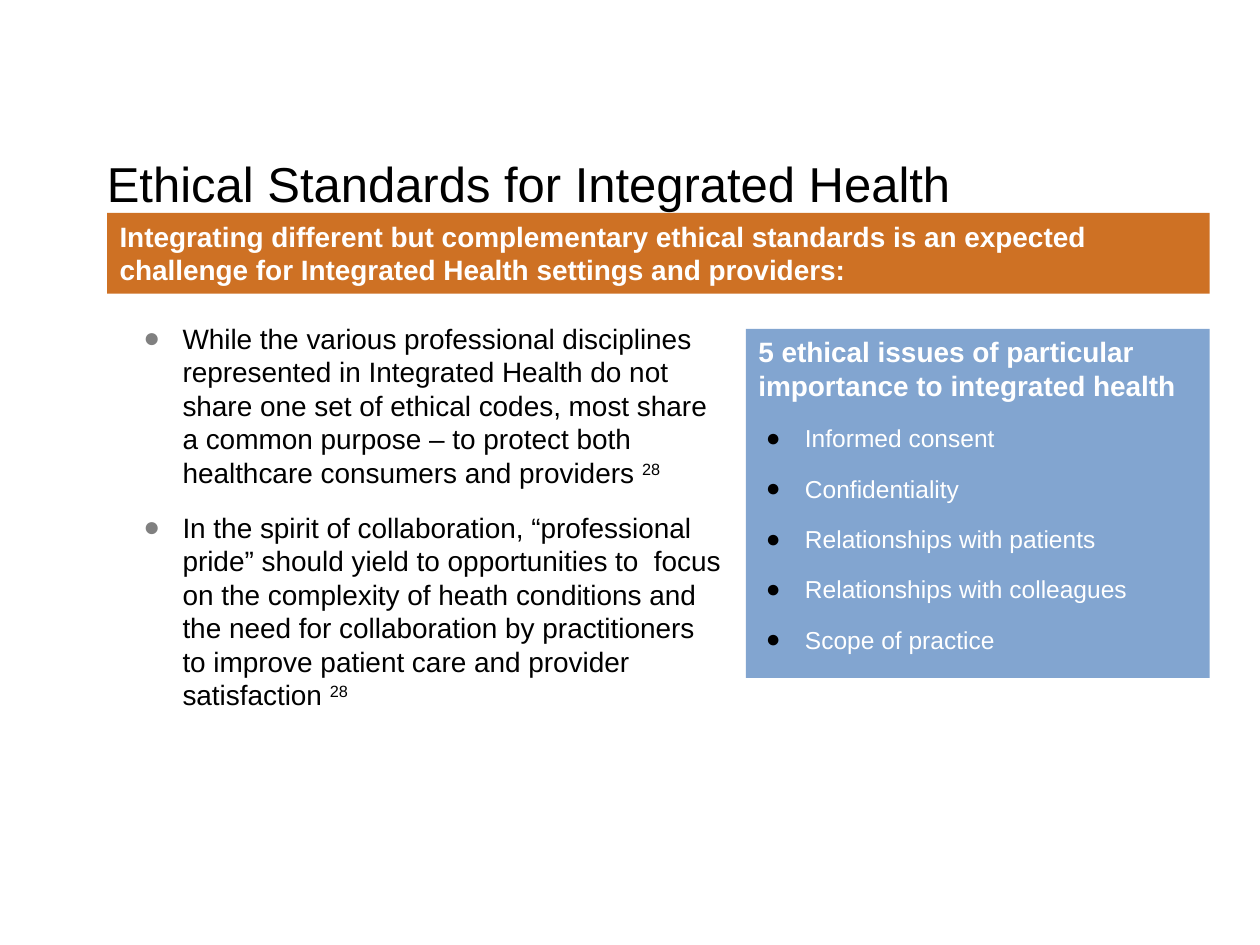
from lxml.etree import SubElement
from pptx import Presentation
from pptx.dml.color import RGBColor as RGB
from pptx.enum.shapes import MSO_SHAPE as SHAPE
from pptx.enum.text import MSO_ANCHOR as ANCHOR, PP_ALIGN as ALIGN
from pptx.oxml.ns import qn
from pptx.util import Inches, Pt

COLORS = {"black": "000000", "white": "FFFFFF", "gray": "808080",
          "blue": "82A5D0", "orange": "CE7124"}

prs = Presentation()
prs.slide_width, prs.slide_height = Inches(10), Inches(7.5)
slide = prs.slides.add_slide(prs.slide_layouts[6])


def add_box(left, top, width, height, fill=None):
    """Add a text box, or a plain rectangle when a fill is given."""
    place = [Inches(n) for n in (left, top, width, height)]
    if fill:
        box = slide.shapes.add_shape(SHAPE.RECTANGLE, *place)
        box.shadow.inherit = False
        box.fill.solid()
        box.fill.fore_color.rgb = RGB.from_string(COLORS[fill])
        box.line.fill.background()
    else:
        box = slide.shapes.add_textbox(*place)
    frame = box.text_frame
    frame.word_wrap = True
    frame.vertical_anchor = ANCHOR.TOP
    return frame


def add_para(frame, text, size, color, bold=False, bullet=None, indent=0, note=None):
    """Write the next paragraph, with an optional bullet and raised note number."""
    first = not frame.paragraphs[0].runs
    para = frame.paragraphs[0] if first else frame.add_paragraph()
    para.alignment = ALIGN.LEFT
    if not first:
        para.space_before = Pt(12)
    if bullet:
        props = para._p.get_or_add_pPr()
        props.set("marL", str(Inches(indent)))
        props.set("indent", str(-Inches(0.31)))
        tint = SubElement(props, qn("a:buClr"))
        SubElement(tint, qn("a:srgbClr"), val=COLORS[bullet])
        SubElement(props, qn("a:buFont"), typeface="Arial")
        SubElement(props, qn("a:buChar"), char="●")
    para.add_run().text = text
    if note:
        run = para.add_run()
        run.text = note
        run._r.get_or_add_rPr().set("baseline", "30000")
    font = para.font
    font.name, font.size, font.bold = "Arial", Pt(size), bold
    font.color.rgb = RGB.from_string(COLORS[color])


# Banner, placed first so that the title stays in front
banner = add_box(0.85, 1.69, 8.75, 0.64, fill="orange")
add_para(banner, "Integrating different but complementary ethical standards is an "
         "expected challenge for Integrated Health settings and providers:",
         16, "white", bold=True)

# Title
title = add_box(0.75, 1.17, 8.75, 0.92)
title.margin_top = Inches(0.05)
add_para(title, "Ethical Standards for Integrated Health", 28, "black")

# Main points
body = add_box(1.04, 2.5, 4.79, 3.08)
points = [
    "While the various professional disciplines represented in Integrated Health "
    "do not share one set of ethical codes, most share a common purpose – to "
    "protect both healthcare consumers and providers ",
    "In the spirit of collaboration, “professional pride” should yield to "
    "opportunities to  focus on the complexity of heath conditions and the need "
    "for collaboration by practitioners to improve patient care and provider "
    "satisfaction ",
]
for point in points:
    add_para(body, point, 16, "black", bullet="gray", indent=0.31, note="28")

# Panel of ethical issues
panel = add_box(5.92, 2.61, 3.68, 2.77, fill="blue")
add_para(panel, "5 ethical issues of particular importance to integrated health",
         16, "white", bold=True)
issues = ["Informed consent", "Confidentiality", "Relationships with patients",
          "Relationships with colleagues", "Scope of practice"]
for issue in issues:
    add_para(panel, issue, 14, "white", bullet="black", indent=0.37)

prs.save("out.pptx")
